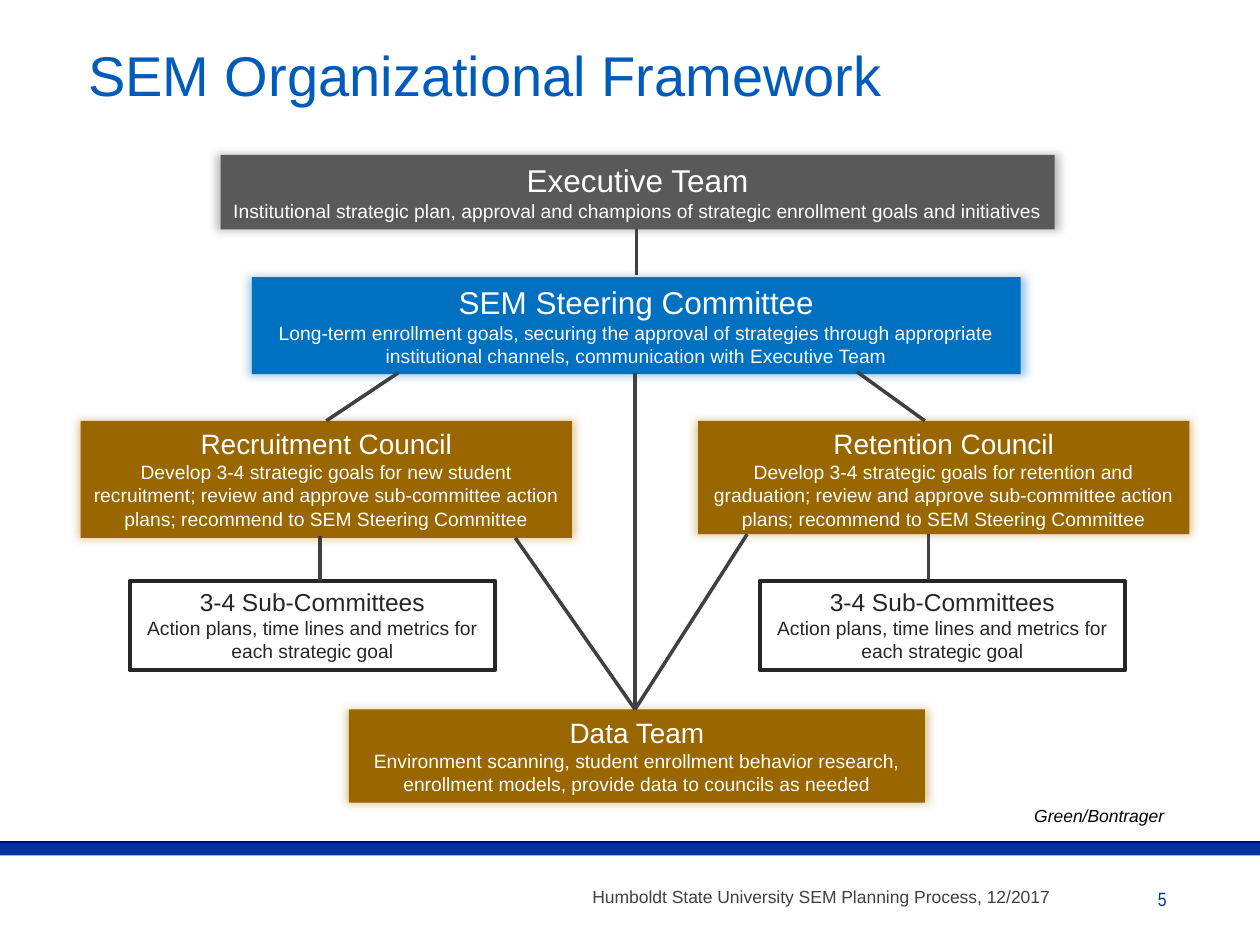
from dataclasses import dataclass

from lxml.etree import SubElement
from pptx import Presentation
from pptx.dml.color import RGBColor
from pptx.enum.shapes import MSO_CONNECTOR, MSO_SHAPE
from pptx.enum.text import MSO_ANCHOR, PP_ALIGN
from pptx.oxml.ns import qn
from pptx.util import Inches, Pt


@dataclass(frozen=True)
class Theme:
    font: str = "Arial"
    number_font: str = "Arial Narrow"
    title: str = "005BBB"
    executive: str = "595959"
    steering: str = "0070C0"
    council: str = "996600"
    council_glow: str = "B47800"
    light: str = "FFFFFF"
    dark: str = "262626"
    link: str = "404040"
    band: str = "003399"
    band_edge: str = "000090"
    number: str = "0036A2"
    credit: str = "000000"
    title_size: int = 32
    lead_size: int = 18
    council_size: int = 16
    sub_size: int = 14
    body_size: int = 11
    small_size: int = 10


THEME = Theme()
COLUMNS, ROWS = 100, 75
WIDTH, HEIGHT = Inches(10), Inches(7.5)


def col(count):
    return round(WIDTH * count / COLUMNS)


def row(count):
    return round(HEIGHT * count / ROWS)


def place(left, top, width, height):
    return col(left), row(top), col(width), row(height)


def color(value):
    return RGBColor.from_string(value)


def add_span(para, text, size, ink, font=THEME.font, italic=False):
    span = para.add_run()
    span.text = text
    span.font.name = font
    span.font.size = Pt(size)
    span.font.color.rgb = color(ink)
    if italic:
        span.font.italic = True


def add_label(page, area, text, size, ink, align=PP_ALIGN.LEFT,
              anchor=MSO_ANCHOR.TOP, flush=False, **style):
    frame = page.shapes.add_textbox(*place(*area)).text_frame
    frame.word_wrap = True
    frame.vertical_anchor = anchor
    if flush:
        frame.margin_left = frame.margin_right = 0
        frame.margin_top = frame.margin_bottom = 0
    para = frame.paragraphs[0]
    para.alignment = align
    add_span(para, text, size, ink, **style)


def add_effects(shape):
    return SubElement(shape._element.spPr, qn("a:effectLst"))


def add_glow(box, glow):
    shadow = SubElement(add_effects(box), qn("a:outerShdw"), blurRad=str(Pt(5)),
                        dist="0", dir="0", sx="101000", sy="101000",
                        algn="ctr", rotWithShape="0")
    tint = SubElement(shadow, qn("a:srgbClr"), val=glow)
    SubElement(tint, qn("a:alpha"), val="40000")


def add_box(page, area, heading, body, size, fill=None, glow=None):
    box = page.shapes.add_shape(MSO_SHAPE.RECTANGLE, *place(*area))
    if fill:
        box.fill.solid()
        box.fill.fore_color.rgb = color(fill)
        box.line.fill.background()
        add_glow(box, glow or fill)
    else:
        box.shadow.inherit = False
        box.fill.background()
        box.line.color.rgb = color(THEME.dark)
        box.line.width = Pt(2.25)
    frame = box.text_frame
    frame.word_wrap = True
    frame.vertical_anchor = MSO_ANCHOR.TOP
    ink = THEME.light if fill else THEME.dark
    lines = ((frame.paragraphs[0], heading, size),
             (frame.add_paragraph(), body, THEME.body_size))
    for para, text, text_size in lines:
        para.alignment = PP_ALIGN.CENTER
        add_span(para, text, text_size, ink)


def add_link(page, start, end, ink=THEME.link, weight=2):
    link = page.shapes.add_connector(MSO_CONNECTOR.STRAIGHT, col(start[0]), row(start[1]),
                                     col(end[0]), row(end[1]))
    link.line.color.rgb = color(ink)
    link.line.width = Pt(weight)
    add_effects(link)


def add_footer(page):
    band = page.shapes.add_shape(MSO_SHAPE.RECTANGLE, *place(0, 66.8, COLUMNS, 1.1))
    band.shadow.inherit = False
    band.fill.solid()
    band.fill.fore_color.rgb = color(THEME.band)
    band.line.fill.background()
    add_link(page, (0, 66.8), (COLUMNS, 66.8), THEME.band_edge, 1)
    add_label(page, (37.1, 69.5, 46.2, 2.5),
              "Humboldt State University SEM Planning Process, 12/2017",
              THEME.small_size, THEME.link, PP_ALIGN.RIGHT, MSO_ANCHOR.BOTTOM, flush=True)
    add_label(page, (90.2, 69.9, 4.1, 2.9), "5", THEME.body_size, THEME.number,
              PP_ALIGN.CENTER, font=THEME.number_font)


def add_teams(page):
    add_box(page, (17.5, 12.3, 66.2, 5.9), "Executive Team",
            "Institutional strategic plan, approval and champions of strategic "
            "enrollment goals and initiatives", THEME.lead_size, THEME.executive)
    add_box(page, (20, 22, 61, 7.7), "SEM Steering Committee",
            "Long-term enrollment goals, securing the approval of strategies through "
            "appropriate institutional channels, communication with Executive Team",
            THEME.lead_size, THEME.steering)
    councils = ((6.4, 9.3, "Recruitment Council", "new student recruitment"),
                (55.4, 9, "Retention Council", "retention and graduation"))
    for left, height, heading, aim in councils:
        add_box(page, (left, 33.4, 39, height), heading,
                f"Develop 3-4 strategic goals for {aim}; review and approve "
                "sub-committee action plans; recommend to SEM Steering Committee",
                THEME.council_size, THEME.council, THEME.council_glow)
    for left in (10.3, 60.3):
        add_box(page, (left, 46.1, 29, 7.1), "3-4 Sub-Committees",
                "Action plans, time lines and metrics for each strategic goal",
                THEME.sub_size)
    add_box(page, (27.7, 56.3, 45.7, 7.4), "Data Team",
            "Environment scanning, student enrollment behavior research, "
            "enrollment models, provide data to councils as needed",
            THEME.council_size, THEME.council, THEME.council_glow)


def add_links(page):
    data_team = (50.4, 56.3)
    for source in ((50.4, 29.6), (40.9, 42.7), (59.3, 42.4)):
        add_link(page, data_team, source)
    add_link(page, (50.5, 21.8), (50.5, 18.2))
    add_link(page, (31.6, 29.6), (25.9, 33.4))
    add_link(page, (68, 29.5), (73.4, 33.4))
    add_link(page, (25.4, 46.1), (25.4, 42.5))
    add_link(page, (73.7, 46), (73.7, 42.4))


def main():
    deck = Presentation()
    deck.slide_width, deck.slide_height = WIDTH, HEIGHT
    page = deck.slides.add_slide(deck.slide_layouts[6])
    add_footer(page)
    add_label(page, (7, 3.1, 81.4, 5.6), "SEM Organizational Framework",
              THEME.title_size, THEME.title, anchor=MSO_ANCHOR.MIDDLE, flush=True)
    add_teams(page)
    add_links(page)
    add_label(page, (81.1, 63.4, 14.9, 2.7), "Green/Bontrager",
              THEME.small_size, THEME.credit, italic=True)
    deck.save("out.pptx")


if __name__ == "__main__":
    main()
